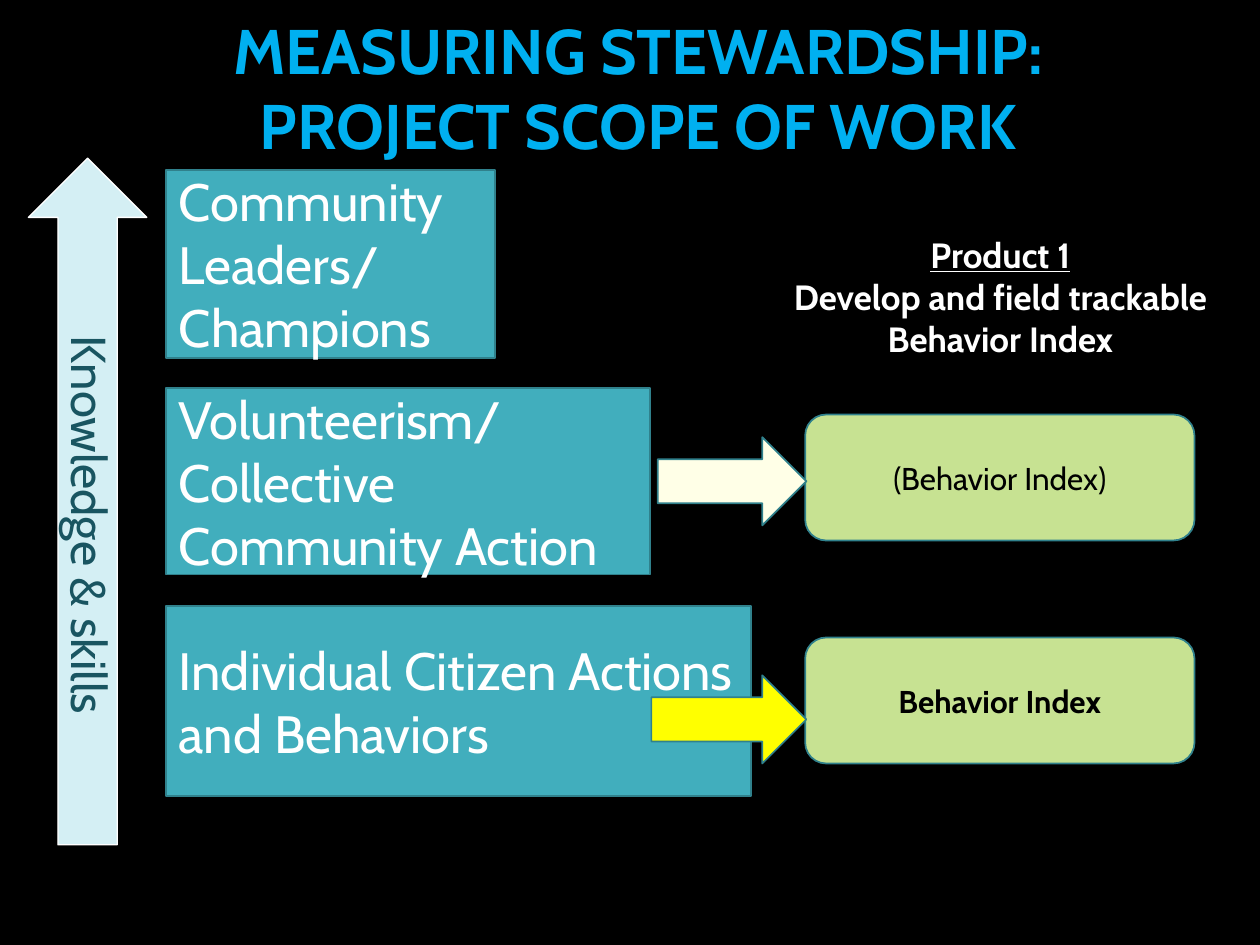
from dataclasses import dataclass

from pptx import Presentation
from pptx.dml.color import RGBColor
from pptx.enum.shapes import MSO_SHAPE
from pptx.enum.text import MSO_ANCHOR, MSO_AUTO_SIZE, PP_ALIGN
from pptx.util import Inches, Pt


@dataclass(frozen=True)
class Theme:
    font: str = "Cabin"
    background: str = "000000"
    title: str = "00B0F0"
    light_text: str = "FFFFFF"
    dark_text: str = "000000"
    level: str = "41AEBD"
    outline: str = "30818C"
    index: str = "C7E292"
    axis: str = "D4EFF4"
    axis_outline: str = "FFFFFF"
    axis_text: str = "195561"
    strong_link: str = "FFFF00"
    weak_link: str = "FFFFE7"
    title_size: int = 36
    level_size: int = 30
    axis_size: int = 28
    product_size: int = 20
    index_size: int = 18


class SlideBuilder:
    def __init__(self, slide, theme):
        self.slide = slide
        self.theme = theme
        fill = slide.background.fill
        fill.solid()
        fill.fore_color.rgb = RGBColor.from_string(theme.background)

    def set_text(self, shape, lines, size, color, bold=False, align=PP_ALIGN.CENTER):
        frame = shape.text_frame
        frame.word_wrap = True
        frame.text = "\n".join(lines)
        for paragraph in frame.paragraphs:
            paragraph.alignment = align
            font = paragraph.font
            font.name = self.theme.font
            font.size = Pt(size)
            font.bold = bold
            font.color.rgb = RGBColor.from_string(color)

    def shape(self, kind, box, fill, outline=None, width=1):
        shape = self.slide.shapes.add_shape(kind, *map(Inches, box))
        shape.shadow.inherit = False
        shape.fill.solid()
        shape.fill.fore_color.rgb = RGBColor.from_string(fill)
        shape.line.color.rgb = RGBColor.from_string(outline or self.theme.outline)
        shape.line.width = Pt(width)
        return shape

    def text(self, box, lines, size, color, bold=False):
        shape = self.slide.shapes.add_textbox(*map(Inches, box))
        self.set_text(shape, lines, size, color, bold)
        shape.text_frame.auto_size = MSO_AUTO_SIZE.SHAPE_TO_FIT_TEXT
        return shape

    def level(self, top, width, height, lines):
        shape = self.shape(MSO_SHAPE.RECTANGLE, (1.32, top, width, height), self.theme.level)
        shape.text_frame.vertical_anchor = MSO_ANCHOR.MIDDLE
        self.set_text(shape, lines, self.theme.level_size, self.theme.light_text,
                      align=PP_ALIGN.LEFT)

    def index(self, top, label, bold):
        shape = self.shape(MSO_SHAPE.ROUNDED_RECTANGLE, (6.39, top, 3.09, 1), self.theme.index)
        shape.text_frame.vertical_anchor = MSO_ANCHOR.MIDDLE
        self.set_text(shape, [label], self.theme.index_size, self.theme.dark_text, bold)

    def link(self, left, top, fill):
        """Draw a block arrow that ends at the index boxes."""
        self.shape(MSO_SHAPE.RIGHT_ARROW, (left, top, 6.4 - left, 0.7), fill)

    def axis(self, label):
        theme = self.theme
        arrow = self.shape(MSO_SHAPE.RIGHT_ARROW, (-2.03, 3.51, 5.45, 0.94), theme.axis,
                           theme.axis_outline, 0.75)
        arrow.rotation = 270
        caption = self.text((-1.35, 3.88, 4.14, 0.57), [label], theme.axis_size, theme.axis_text)
        caption.rotation = 90


def main():
    presentation = Presentation()
    presentation.slide_width = Inches(10)
    presentation.slide_height = Inches(7.5)
    theme = Theme()
    slide = presentation.slides.add_slide(presentation.slide_layouts[6])
    builder = SlideBuilder(slide, theme)

    builder.level(4.81, 4.64, 1.51, ["Individual Citizen Actions", "and Behaviors"])
    builder.level(3.08, 3.84, 1.48, ["Volunteerism/ Collective Community Action"])
    builder.level(1.35, 2.61, 1.49, ["Community Leaders/ Champions"])

    builder.text((0.43, 0.04, 9.27, 1.31), ["MEASURING STEWARDSHIP:", "PROJECT SCOPE OF WORK"],
                 theme.title_size, theme.title, bold=True)
    builder.axis("Knowledge & skills")

    builder.index(5.06, "Behavior Index", bold=True)
    builder.index(3.29, "(Behavior Index)", bold=False)
    product = builder.text((6.18, 1.8, 3.52, 1.11),
                           ["Product 1", "Develop and field trackable Behavior Index"],
                           theme.product_size, theme.light_text, bold=True)
    product.text_frame.paragraphs[0].font.underline = True

    builder.link(5.17, 5.36, theme.strong_link)
    builder.link(5.22, 3.47, theme.weak_link)

    presentation.save("out.pptx")


if __name__ == "__main__":
    main()
